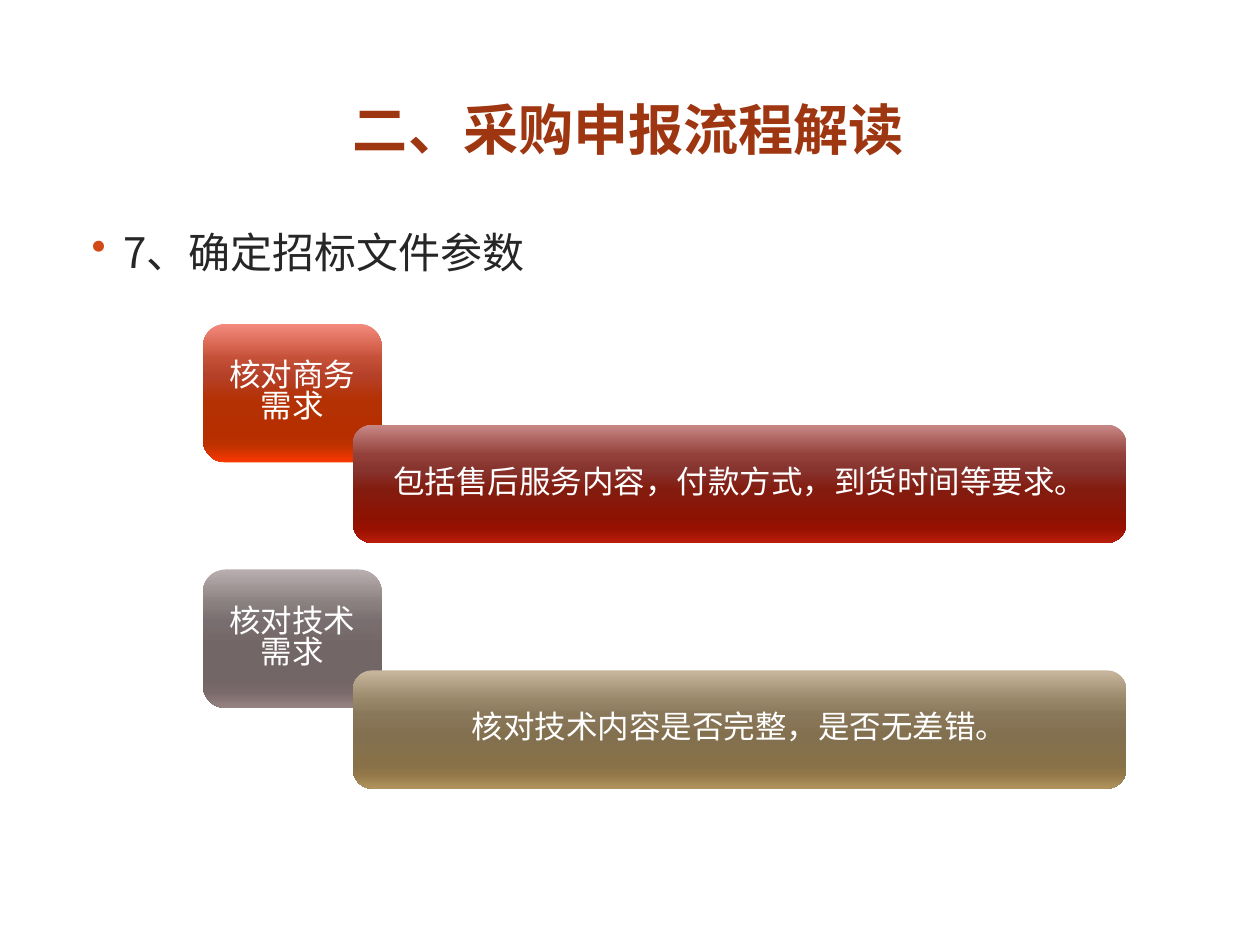
from dataclasses import dataclass

import pptx
import pptx.dml.color
import pptx.enum.shapes
import pptx.enum.text
import pptx.oxml
import pptx.oxml.ns
import pptx.util
from pptx.util import Inches

COLORS = {"title": "9E3611", "body": "262626", "bullet": "D34817", "label": "FFFFFF"}
CJK_FONT = "Noto Sans CJK SC"
LABEL_FONT = "League Spartan"
STOP_POSITIONS = (0, 25, 38, 55, 80, 88, 100)
GRADIENTS = {
    "orange": "F48A7D C55038 B54028 B43103 B62F00 BF3200 FB3700",
    "red": "C88987 94413B 87342F 831C0F 8E1202 981100 BB1D0D",
    "gray": "B9AFB0 8A7F7F 796E6F 736667 736465 7A696A 968384",
    "tan": "C8B79E 998769 897759 83704F 887149 927849 B2945E",
}
FIRST_TOP = 2.57
STEP_PITCH = 1.95
DETAIL_DROP = 0.8


@dataclass
class Check:
    topic: str
    topic_gradient: str
    detail: str
    detail_gradient: str


CHECKS = [
    Check("核对商务需求", "orange", "包括售后服务内容，付款方式，到货时间等要求。", "red"),
    Check("核对技术需求", "gray", "核对技术内容是否完整，是否无差错。", "tan"),
]


def add_xml(parent, tag: str, content: str = "", **attributes) -> None:
    attrs = "".join(f' {name}="{value}"' for name, value in attributes.items())
    namespace = pptx.oxml.ns.nsdecls("a")
    parent.append(pptx.oxml.parse_xml(f"<a:{tag} {namespace}{attrs}>{content}</a:{tag}>"))


def style_paragraph(paragraph, size: float, color: str, font: str, bold: bool = False) -> None:
    paragraph.font.size = pptx.util.Pt(size)
    paragraph.font.bold = bold
    paragraph.font.color.rgb = pptx.dml.color.RGBColor.from_string(COLORS[color])
    paragraph.font.name = font
    defaults = paragraph._p.pPr.find(pptx.oxml.ns.qn("a:defRPr"))
    add_xml(defaults, "ea", typeface=CJK_FONT)


def fill_gradient(shape, gradient: str) -> None:
    """Fill from top to bottom with the named series of colour stops."""
    shape.fill.gradient()
    shape.fill.gradient_angle = 270
    stops = shape._element.spPr.find(".//" + pptx.oxml.ns.qn("a:gsLst"))
    for stop in list(stops):
        stops.remove(stop)
    for position, color in zip(STOP_POSITIONS, GRADIENTS[gradient].split()):
        add_xml(stops, "gs", f'<a:srgbClr val="{color}"/>', pos=position * 1000)


def add_box(slide, left: float, top: float, width: float, height: float,
            label: str, gradient: str) -> None:
    box = slide.shapes.add_shape(
        pptx.enum.shapes.MSO_SHAPE.ROUNDED_RECTANGLE,
        Inches(left), Inches(top), Inches(width), Inches(height))
    box.shadow.inherit = False
    box.line.fill.background()
    fill_gradient(box, gradient)
    frame = box.text_frame
    frame.word_wrap = True
    frame.vertical_anchor = pptx.enum.text.MSO_ANCHOR.MIDDLE
    paragraph = frame.paragraphs[0]
    paragraph.text = label
    paragraph.alignment = pptx.enum.text.PP_ALIGN.CENTER
    paragraph.line_spacing = 0.82
    style_paragraph(paragraph, 18, "label", LABEL_FONT)


def add_title(slide) -> None:
    title = slide.shapes.title
    title.left, title.top = Inches(0.47), Inches(0.45)
    title.width, title.height = Inches(9.03), Inches(1.14)
    title.text_frame.vertical_anchor = pptx.enum.text.MSO_ANCHOR.MIDDLE
    paragraph = title.text_frame.paragraphs[0]
    paragraph.text = "二、采购申报流程解读"
    paragraph.alignment = pptx.enum.text.PP_ALIGN.CENTER
    style_paragraph(paragraph, 31.5, "title", CJK_FONT, bold=True)


def add_step_heading(slide) -> None:
    heading = slide.shapes.add_textbox(Inches(0.5), Inches(1.75), Inches(9), Inches(0.6))
    heading.text_frame.word_wrap = True
    paragraph = heading.text_frame.paragraphs[0]
    paragraph.text = "7、确定招标文件参数"
    properties = paragraph._p.get_or_add_pPr()
    properties.set("marL", str(Inches(0.38)))
    properties.set("indent", str(Inches(-0.25)))
    add_xml(properties, "buClr", f'<a:srgbClr val="{COLORS["bullet"]}"/>')
    add_xml(properties, "buChar", char="•")
    style_paragraph(paragraph, 24, "body", CJK_FONT)


def main() -> None:
    deck = pptx.Presentation()
    deck.slide_width, deck.slide_height = Inches(10), Inches(7.5)
    slide = deck.slides.add_slide(deck.slide_layouts.get_by_name("Title Only"))
    add_title(slide)
    add_step_heading(slide)
    for row, check in enumerate(CHECKS):
        top = FIRST_TOP + row * STEP_PITCH
        add_box(slide, 1.61, top, 1.42, 1.1, check.topic, check.topic_gradient)
        add_box(slide, 2.8, top + DETAIL_DROP, 6.14, 0.94, check.detail, check.detail_gradient)
    deck.save("out.pptx")


if __name__ == "__main__":
    main()
